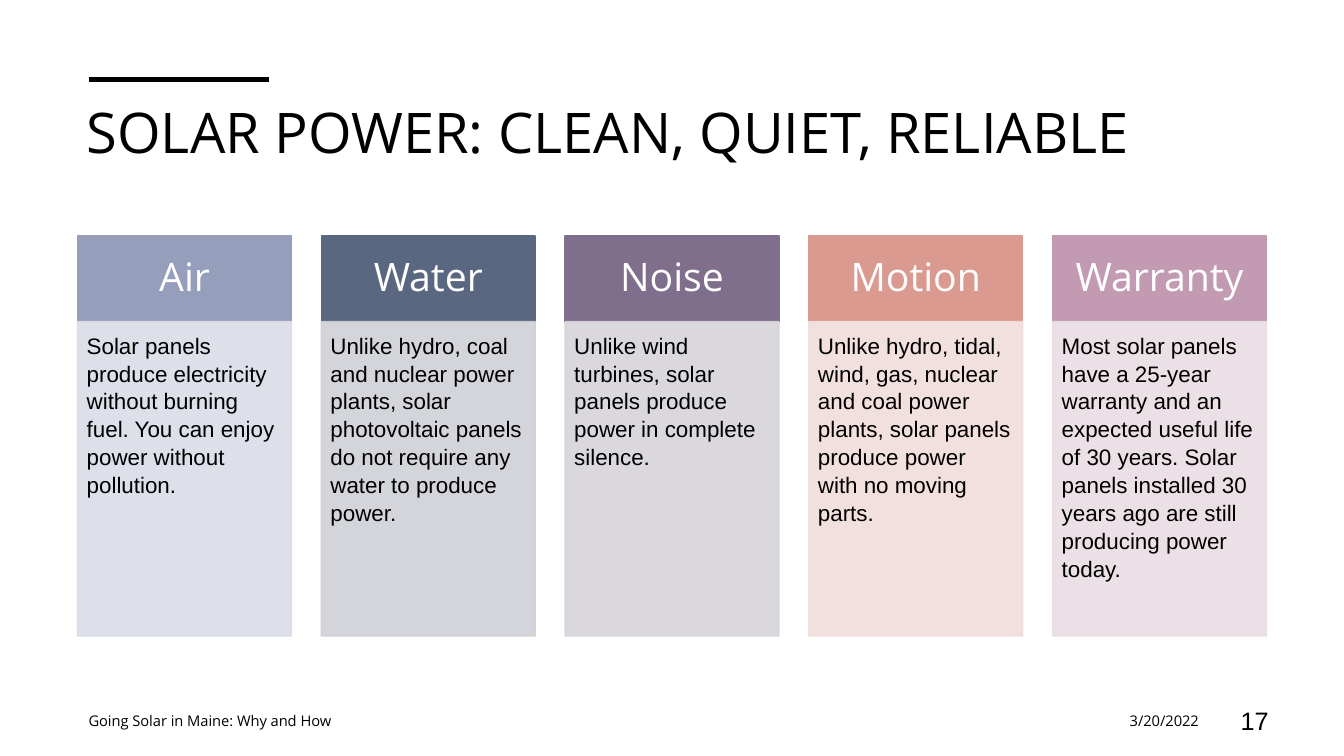
from lxml.etree import SubElement as Sub
from pptx import Presentation
from pptx.dml.color import RGBColor as RGB
from pptx.enum.shapes import MSO_CONNECTOR as Conn, MSO_SHAPE as Kind
from pptx.enum.text import MSO_ANCHOR as Anchor, MSO_AUTO_SIZE as Fit, PP_ALIGN as Align
from pptx.oxml.ns import qn
from pptx.util import Inches, Pt

BLACK, WHITE = RGB(0, 0, 0), RGB(255, 255, 255)
HEAD, BODY = "Open Sans", "Arial"
PAD = (0.1, 0.05, 0.1, 0.05)

# Heading, head colour, body colour, body text
CARDS = [
    ("Air", RGB(0x95, 0x9E, 0xBB), RGB(0xDA, 0xDC, 0xE7),
     "Solar panels produce electricity without burning fuel. "
     "You can enjoy power without pollution."),
    ("Water", RGB(0x59, 0x67, 0x81), RGB(0xCF, 0xD1, 0xD7),
     "Unlike hydro, coal and nuclear power plants, solar photovoltaic "
     "panels do not require any water to produce power."),
    ("Noise", RGB(0x7F, 0x6E, 0x8C), RGB(0xD7, 0xD3, 0xDA),
     "Unlike wind turbines, solar panels produce power in complete silence."),
    ("Motion", RGB(0xDA, 0x9A, 0x8F), RGB(0xF1, 0xDD, 0xDB),
     "Unlike hydro, tidal, wind, gas, nuclear and coal power plants, "
     "solar panels produce power with no moving parts."),
    ("Warranty", RGB(0xC2, 0x9A, 0xB1), RGB(0xE9, 0xDD, 0xE4),
     "Most solar panels have a 25-year warranty and an expected useful "
     "life of 30 years. Solar panels installed 30 years ago are still "
     "producing power today."),
]
LEFT, STEP, WIDE = 0.77, 2.4175, 2.12


def apply(item, form):
    for key, val in form.items():
        setattr(item, key, val)


def write(shape, text, size, face, color=BLACK, pad=PAD,
          anchor=Anchor.MIDDLE, align=Align.LEFT, space=1.0):
    frame = shape.text_frame
    sides = ("margin_left", "margin_top", "margin_right", "margin_bottom")
    apply(frame, {"text": text, "word_wrap": True, "auto_size": Fit.NONE,
                  "vertical_anchor": anchor})
    apply(frame, dict(zip(sides, map(Inches, pad))))
    para = frame.paragraphs[0]
    apply(para, {"alignment": align, "line_spacing": space, "space_before": Pt(0)})
    apply(para.font, {"size": Pt(size), "name": face, "bold": False})
    para.font.color.rgb = color


def fade(shape, rate):
    for node in shape._element.spPr.iter(qn("a:srgbClr")):
        Sub(node, qn("a:alpha"), val=str(rate * 1000))


def block(slide, box, color):
    shape = slide.shapes.add_shape(Kind.RECTANGLE, *map(Inches, box))
    shape.shadow.inherit = False
    shape.fill.solid()
    shape.fill.fore_color.rgb = color
    shape.line.color.rgb = color
    shape.line.width = Pt(1)
    return shape


def card(slide, left, name, dark, pale, text):
    head = block(slide, (left, 2.34, WIDE, 0.85), dark)
    write(head, name, 28, HEAD, WHITE, (0.22, 0.12, 0.22, 0.12),
          align=Align.CENTER, space=0.9)
    body = block(slide, (left, 3.19, WIDE, 3.12), pale)
    fade(body, 90)
    write(body, text, 16, BODY, pad=(0.09, 0.09, 0.12, 0.14),
          anchor=Anchor.TOP, space=1.04)


def rule(slide):
    ends = map(Inches, (0.88, 0.79, 2.67, 0.79))
    line = slide.shapes.add_connector(Conn.STRAIGHT, *ends)
    line.line.color.rgb = BLACK
    line.line.width = Pt(3.5)
    Sub(line._element.spPr, qn("a:effectLst"))


def title(slide, text):
    shape = slide.shapes.title
    spots = ("left", "top", "width", "height")
    apply(shape, dict(zip(spots, map(Inches, (0.76, 0.97, 11.81, 1.15)))))
    write(shape, text, 40, HEAD, anchor=Anchor.TOP, space=0.95)


def note(slide, left, width, text, size, face, align):
    box = map(Inches, (left, 6.95, width, 0.4))
    write(slide.shapes.add_textbox(*box), text, size, face, align=align)


def main():
    deck = Presentation()
    apply(deck, {"slide_width": Inches(13.33), "slide_height": Inches(7.5)})
    slide = deck.slides.add_slide(deck.slide_layouts[5])

    # Title with its rule
    rule(slide)
    title(slide, "SOLAR POWER: CLEAN, QUIET, RELIABLE")

    # Five columns
    for num, parts in enumerate(CARDS):
        card(slide, LEFT + num * STEP, *parts)

    # Footer
    note(slide, 0.78, 4.96, "Going Solar in Maine: Why and How", 10.5, HEAD, Align.LEFT)
    note(slide, 9.15, 2.84, "3/20/2022", 10.5, HEAD, Align.RIGHT)
    note(slide, 11.94, 0.74, "17", 18, BODY, Align.RIGHT)
    deck.save("out.pptx")


if __name__ == "__main__":
    main()
